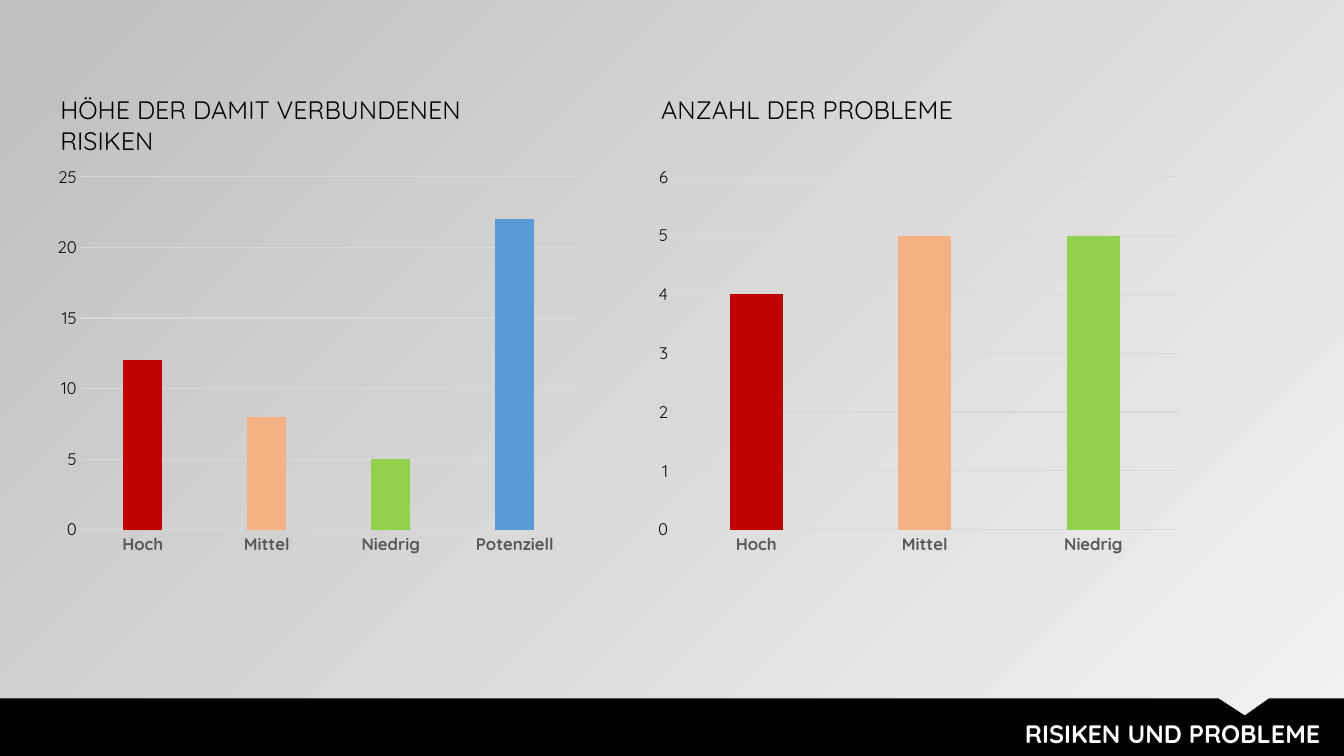
import pptx
import pptx.chart.data
import pptx.dml.color
import pptx.enum.chart
import pptx.enum.text
import pptx.util

Cm = pptx.util.Cm
Pt = pptx.util.Pt
FACE = "Quicksand"
WIDE, HIGH = 33.87, 19.05
LEFT, STEP = 1.17, 15.14
BLUE = "5B9BD5"
HUES = ["C00000", "F4B183", "92D050", BLUE]
GRID = "D9D9D9"
PANELS = [
    ("HÖHE DER DAMIT VERBUNDENEN RISIKEN",
     [("Hoch", 12), ("Mittel", 8), ("Niedrig", 5), ("Potenziell", 22)], 25, 5),
    ("ANZAHL DER PROBLEME",
     [("Hoch", 4), ("Mittel", 5), ("Niedrig", 5)], 6, 1),
]
BAND = [(0, 17.6), (30.71, 17.6), (31.37, 18.03), (31.98, 17.6),
        (WIDE, 17.6), (WIDE, HIGH), (0, HIGH)]


def tint(color, code):
    color.rgb = pptx.dml.color.RGBColor.from_string(code)


def paint(fill, code):
    fill.solid()
    tint(fill.fore_color, code)


def style(font, size, code, bold=False):
    font.name = FACE
    font.size = Pt(size)
    font.bold = bold
    tint(font.color, code)


def place(shape, left, top, width, height):
    shape.left, shape.top = Cm(left), Cm(top)
    shape.width, shape.height = Cm(width), Cm(height)


def write(shape, words, code, bold=False, align=pptx.enum.text.PP_ALIGN.LEFT):
    frame = shape.text_frame
    frame.word_wrap = True
    frame.auto_size = pptx.enum.text.MSO_AUTO_SIZE.SHAPE_TO_FIT_TEXT
    frame.vertical_anchor = pptx.enum.text.MSO_ANCHOR.TOP
    para = frame.paragraphs[0]
    para.alignment = align
    run = para.add_run()
    run.text = words
    style(run.font, 18, code, bold)


def add_back(slide):
    fill = slide.background.fill
    fill.gradient()
    fill.gradient_angle = 135
    for stop, code in zip(fill.gradient_stops, ["F2F2F2", "BFBFBF"]):
        tint(stop.color, code)


def add_head(slide, left, words):
    box = slide.shapes.add_textbox(Cm(left), Cm(2.26), Cm(11.28), Cm(1.02))
    write(box, words, "000000")


def add_bars(slide, left, pairs, top, unit):
    data = pptx.chart.data.CategoryChartData()
    data.categories = [name for name, count in pairs]
    data.add_series("Series 1", [count for name, count in pairs])
    kind = pptx.enum.chart.XL_CHART_TYPE.COLUMN_CLUSTERED
    chart = slide.shapes.add_chart(
        kind, Cm(left), Cm(3.99), Cm(13.64), Cm(10.19), data).chart
    chart.has_legend = False
    chart.has_title = False
    style(chart.font, 10, "000000")

    plot = chart.plots[0]
    plot.gap_width = 219
    plot.overlap = -5
    plot.vary_by_categories = False
    bars = plot.series[0]
    paint(bars.format.fill, BLUE)
    for spot, code in enumerate(HUES[:len(pairs)]):
        paint(bars.points[spot].format.fill, code)

    names, scale = chart.category_axis, chart.value_axis
    for axis in (names, scale):
        axis.major_tick_mark = pptx.enum.chart.XL_TICK_MARK.NONE
        axis.minor_tick_mark = pptx.enum.chart.XL_TICK_MARK.NONE
    style(names.tick_labels.font, 12, "595959", True)
    style(scale.tick_labels.font, 12, "0D0D0D")
    scale.minimum_scale = 0
    scale.maximum_scale = top
    scale.major_unit = unit
    scale.format.line.fill.background()
    for line in (names.format.line, scale.major_gridlines.format.line):
        paint(line.fill, GRID)
        line.width = Pt(0.75)


def add_band(slide):
    start, *rest = [(Cm(x), Cm(y)) for x, y in BAND]
    pen = slide.shapes.build_freeform(*start)
    pen.add_line_segments(rest, close=True)
    band = pen.convert_to_shape()
    band.shadow.inherit = False
    paint(band.fill, "000000")
    band.line.fill.background()


def set_title(slide, words):
    title = slide.shapes.title
    place(title, 10.52, 17.98, 23.01, 1.02)
    write(title, words, "FFFFFF", True, pptx.enum.text.PP_ALIGN.RIGHT)
    slide.shapes._spTree.append(title._element)


def main():
    deck = pptx.Presentation()
    deck.slide_width, deck.slide_height = Cm(WIDE), Cm(HIGH)
    slide = deck.slides.add_slide(deck.slide_layouts[5])
    add_back(slide)
    for spot, (head, pairs, top, unit) in enumerate(PANELS):
        left = LEFT + spot * STEP
        add_bars(slide, left, pairs, top, unit)
        add_head(slide, left + 0.1, head)
    add_band(slide)
    set_title(slide, "RISIKEN UND PROBLEME")
    deck.save("out.pptx")


if __name__ == "__main__":
    main()
